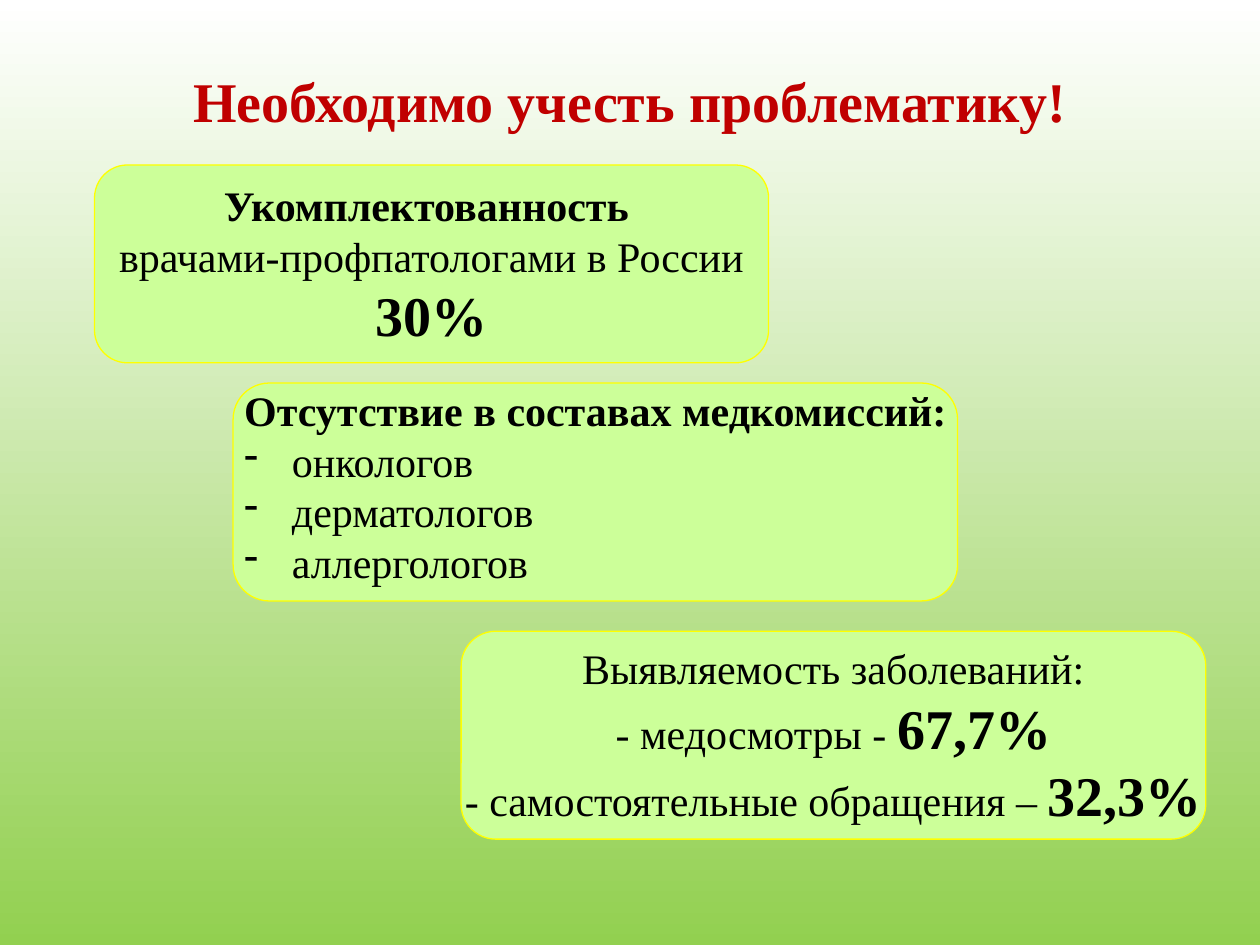
import pptx
import pptx.util
import pptx.dml.color
import pptx.enum.shapes
import pptx.enum.text
import pptx.oxml.ns
from lxml import etree

Inches = pptx.util.Inches
RGB = pptx.dml.color.RGBColor
ALIGN = pptx.enum.text.PP_ALIGN
MIDDLE = pptx.enum.text.MSO_ANCHOR.MIDDLE

WHITE = RGB(0xFF, 0xFF, 0xFF)
GREEN = RGB(0x92, 0xD0, 0x50)
LIME = RGB(0xCC, 0xFF, 0x99)
YELLOW = RGB(0xFF, 0xFF, 0x00)
RED = RGB(0xC0, 0x00, 0x00)
BLACK = RGB(0x00, 0x00, 0x00)

FONT = "Times New Roman"
PLAIN = (24, False)
BOLD = (24, True)
BIG = (32, True)


def set_back(slide):
    fill = slide.background.fill
    fill.gradient()
    fill.gradient_angle = 270
    for stop, color in zip(fill.gradient_stops, (WHITE, GREEN)):
        stop.color.rgb = color


def add_dash(para):
    props = para._p.get_or_add_pPr()
    props.set("marL", str(Inches(0.38)))
    props.set("indent", str(Inches(-0.38)))
    mark = etree.SubElement(props, pptx.oxml.ns.qn("a:buChar"))
    mark.set("char", "-")


def write(frame, lines, color=BLACK):
    """Each line is a list of (text, (size, bold)) runs."""
    frame.vertical_anchor = MIDDLE
    for i, line in enumerate(lines):
        para = frame.paragraphs[0] if i == 0 else frame.add_paragraph()
        para.alignment = ALIGN.CENTER
        for text, (size, bold) in line:
            run = para.add_run()
            run.text = text
            font = run.font
            font.name, font.size, font.bold = FONT, pptx.util.Pt(size), bold
            font.color.rgb = color


def add_title(slide, text):
    box = slide.shapes.add_textbox(
        Inches(0.43), Inches(0.36), Inches(9.14), Inches(0.87))
    box.text_frame.word_wrap = True
    write(box.text_frame, [[(text, BIG)]], RED)


def add_card(slide, left, top, width, height, lines):
    card = slide.shapes.add_shape(
        pptx.enum.shapes.MSO_SHAPE.ROUNDED_RECTANGLE,
        Inches(left), Inches(top), Inches(width), Inches(height))
    card.shadow.inherit = False
    card.fill.solid()
    card.fill.fore_color.rgb = LIME
    card.line.color.rgb = YELLOW
    card.line.width = pptx.util.Pt(0.75)
    card.text_frame.word_wrap = False
    write(card.text_frame, lines)
    return card.text_frame


def main():
    deck = pptx.Presentation()
    deck.slide_width, deck.slide_height = Inches(10), Inches(7.5)
    slide = deck.slides.add_slide(deck.slide_layouts[6])
    set_back(slide)
    add_title(slide, "Необходимо учесть проблематику!")

    # Staffing level
    add_card(slide, 0.75, 1.31, 5.35, 1.57, [
        [("Укомплектованность ", BOLD)],
        [("врачами-профпатологами в России", PLAIN)],
        [("30%", BIG)],
    ])

    # Detection rates
    add_card(slide, 3.66, 5.01, 5.91, 1.65, [
        [("Выявляемость заболеваний:", PLAIN)],
        [("- медосмотры - ", PLAIN), ("67,7%", BIG)],
        [("- самостоятельные обращения – ", PLAIN), ("32,3%", BIG)],
    ])

    # Missing specialists, with a dashed list set slightly above the middle
    staff = ["онкологов", "дерматологов", "аллергологов"]
    frame = add_card(slide, 1.85, 3.04, 5.75, 1.73, [
        [("Отсутствие в составах медкомиссий:", BOLD)],
        *[[(name, PLAIN)] for name in staff],
    ])
    frame.margin_bottom = Inches(0.15)
    for para in frame.paragraphs[1:]:
        para.alignment = ALIGN.LEFT
        add_dash(para)

    deck.save("out.pptx")


if __name__ == "__main__":
    main()
